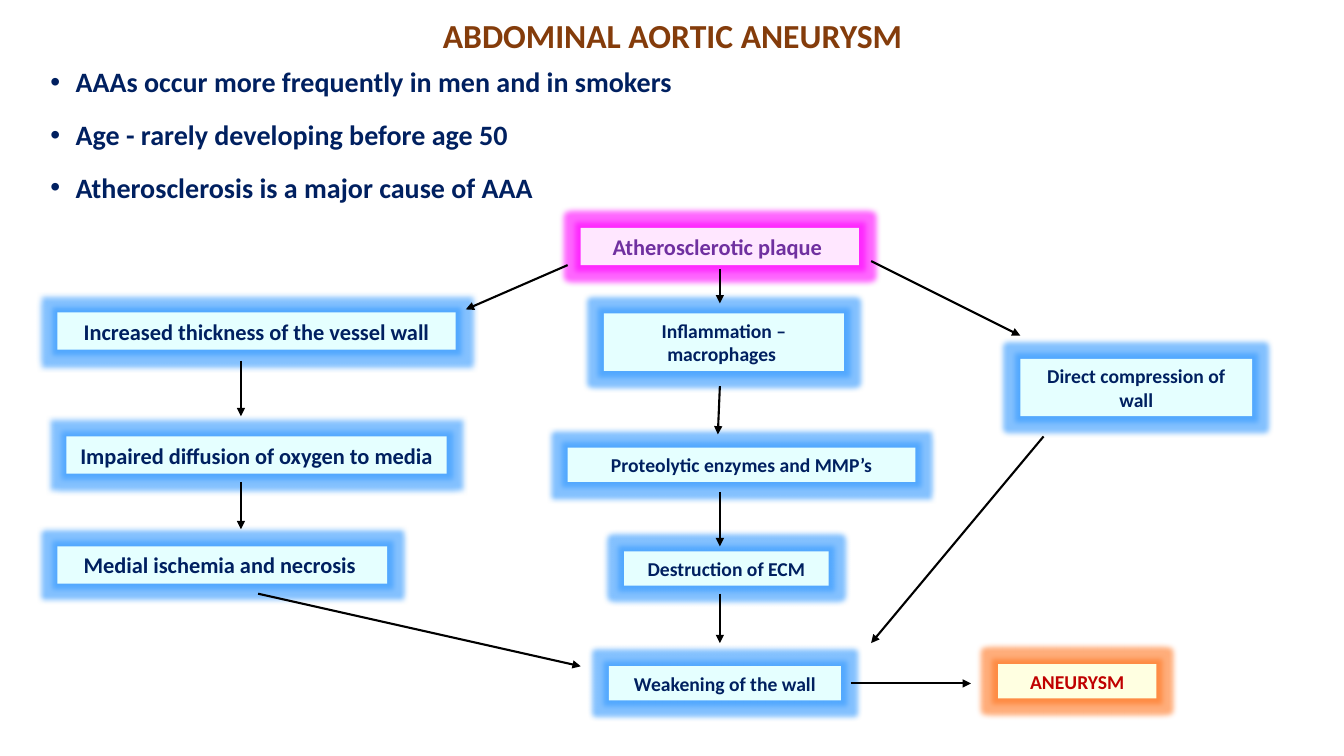
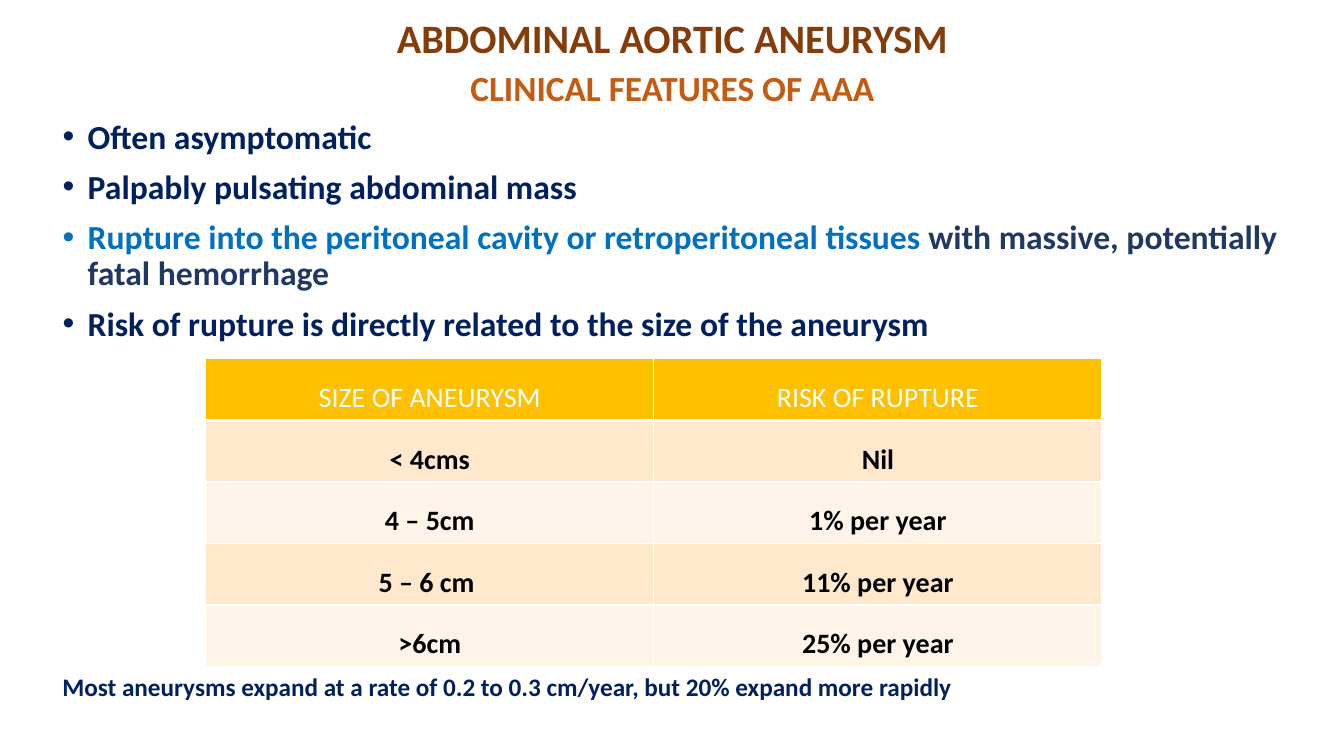
from dataclasses import dataclass

from lxml import etree
from pptx import Presentation, util as u
from pptx.dml.color import RGBColor
from pptx.enum import shapes as sh, text as tx
from pptx.oxml.ns import qn


@dataclass(frozen=True)
class Theme:
    """Colours and type sizes shared by the slides."""
    font: str = "Calibri"
    navy: str = "002060"
    slate: str = "203864"
    blue: str = "0070C0"
    brown: str = "843C0B"
    rust: str = "C55A11"
    black: str = "000000"
    white: str = "FFFFFF"
    gold: str = "FFC000"
    bands: tuple = ("FFE8CC", "FFF4E7")
    cause: tuple = ("FFE7FF", "7030A0", "FF00FF")
    step: tuple = ("E5FFFF", "002060", "3399FF")
    end: tuple = ("FFFFE1", "C00000", "FF7722")
    big: float = 16
    small: float = 14
    note: float = 18
    list: float = 20
    head: float = 24


T = Theme()
HEAD = "ABDOMINAL AORTIC ANEURYSM"


def rgb(code):
    """Turn a hex code into a colour."""
    return RGBColor.from_string(code)


def sub(node, tag, **attrs):
    """Add a drawing element under a node."""
    return etree.SubElement(node, qn("a:" + tag), attrs)


def add_run(para, words, size, color, bold=True):
    """Add one formatted run."""
    run = para.add_run()
    run.text = words
    font = run.font
    font.name, font.size, font.bold = T.font, u.Pt(size), bold
    font.color.rgb = rgb(color)


def place(shape, left, top, width, height):
    """Move and size a shape."""
    shape.left, shape.top = u.Inches(left), u.Inches(top)
    shape.width, shape.height = u.Inches(width), u.Inches(height)


def add_title(slide, box, lines, space, after=0):
    """Fill the title with (words, size, colour) lines."""
    title = slide.shapes.title
    place(title, *box)
    frame = title.text_frame
    frame.auto_size = tx.MSO_AUTO_SIZE.NONE
    frame.vertical_anchor = tx.MSO_ANCHOR.MIDDLE
    para = frame.paragraphs[0]
    para.alignment = tx.PP_ALIGN.CENTER
    para.line_spacing, para.space_after = space, u.Pt(after)
    for i, line in enumerate(lines):
        if i:
            para.add_line_break()
        add_run(para, *line)


def add_list(slide, box, items, size, after=0):
    """Fill the body with bullets, each a list of (words, colour) runs."""
    body = slide.placeholders[1]
    place(body, *box)
    frame = body.text_frame
    frame.auto_size = tx.MSO_AUTO_SIZE.NONE
    for i, item in enumerate(items):
        para = frame.add_paragraph() if i else frame.paragraphs[0]
        props = para._p.get_or_add_pPr()
        props.set("marL", str(u.Inches(0.25)))
        props.set("indent", str(-u.Inches(0.25)))
        sub(props, "buFont", typeface="Arial")
        sub(props, "buChar", char="•")
        para.line_spacing = 0.9
        para.space_before = u.Pt(10 if i else 0)
        para.space_after = u.Pt(after)
        for words, color in item:
            add_run(para, words, size, color)


def add_box(slide, box, words, size, look=T.step):
    """Draw a glowing flow box."""
    fill, ink, glow = look
    shape = slide.shapes.add_shape(
        sh.MSO_SHAPE.RECTANGLE, *map(u.Inches, box))
    shape.fill.solid()
    shape.fill.fore_color.rgb = rgb(fill)
    shape.line.fill.background()
    shape.shadow.inherit = False
    effects = shape.element.spPr.find(qn("a:effectLst"))
    halo = sub(effects, "glow", rad=str(u.Pt(8)))
    tint = sub(halo, "srgbClr", val=glow)
    sub(tint, "alpha", val="60000")
    frame = shape.text_frame
    frame.word_wrap = True
    para = frame.paragraphs[0]
    para.alignment = tx.PP_ALIGN.CENTER
    add_run(para, words, size, ink)


def add_arrow(slide, *ends):
    """Draw an arrow from x, y to x, y."""
    link = slide.shapes.add_connector(
        sh.MSO_CONNECTOR.STRAIGHT, *map(u.Inches, ends))
    link.line.color.rgb = rgb(T.black)
    link.line.width = u.Pt(1.5)
    props = link.element.spPr
    sub(props.find(qn("a:ln")), "tailEnd", type="triangle")
    sub(props, "effectLst")


def add_edges(cell, base):
    """Give a cell white borders."""
    props = cell._tc.get_or_add_tcPr()
    for i, side in enumerate("LRTB"):
        width = base if side == "B" else 1
        edge = sub(props, "ln" + side, w=str(u.Pt(width)))
        sub(sub(edge, "solidFill"), "srgbClr", val=T.white)
        props.insert(i, edge)


def add_grid(slide, box, rows):
    """Draw a table with a header and banded rows."""
    grid = slide.shapes.add_table(
        len(rows), len(rows[0]), *map(u.Inches, box)).table
    for i, row in enumerate(rows):
        for j, words in enumerate(row):
            cell = grid.cell(i, j)
            cell.fill.solid()
            fill = T.bands[(i - 1) % 2] if i else T.gold
            cell.fill.fore_color.rgb = rgb(fill)
            add_edges(cell, 1 if i else 3)
            para = cell.text_frame.paragraphs[0]
            para.alignment = tx.PP_ALIGN.CENTER
            para.line_spacing = 1.5
            add_run(para, words, T.list, T.black if i else T.white, i > 0)


def add_note(slide, box, words):
    """Add a line of plain text."""
    frame = slide.shapes.add_textbox(*map(u.Inches, box)).text_frame
    frame.word_wrap = True
    add_run(frame.paragraphs[0], words, T.note, T.navy)


def add_flow(slide):
    """Draw the chain from plaque to aneurysm."""
    add_box(slide, (5.76, 2.26, 2.76, 0.37), "Atherosclerotic plaque ",
            T.big, T.cause)
    for left, top, width, words in (
            (0.57, 3.1, 3.95, "Increased thickness of the vessel wall"),
            (0.66, 4.33, 3.77, "Impaired diffusion of oxygen to media"),
            (0.57, 5.42, 3.27, "Medial ischemia and necrosis ")):
        add_box(slide, (left, top, width, 0.37), words, T.big)
    for left, top, width, height, words in (
            (5.99, 3.11, 2.38, 0.57, "Inflammation – macrophages "),
            (5.63, 4.44, 3.45, 0.34, "Proteolytic enzymes and MMP’s"),
            (6.19, 5.47, 2.03, 0.34, "Destruction of ECM"),
            (10.12, 3.56, 2.3, 0.57, "Direct compression of wall"),
            (6.04, 6.61, 2.3, 0.34, "Weakening of the wall")):
        add_box(slide, (left, top, width, height), words, T.small)
    add_box(slide, (9.9, 6.59, 1.57, 0.34), "ANEURYSM", T.small, T.end)
    for x, top, end in ((2.39, 3.58, 4.13), (2.39, 4.78, 5.25),
                        (7.14, 2.67, 3.01), (7.14, 4.88, 5.42),
                        (7.14, 5.89, 6.38)):
        add_arrow(slide, x, top, x, end)
    for ends in ((5.63, 2.63, 4.62, 3.07), (8.64, 2.59, 10.12, 3.33),
                 (7.14, 3.83, 7.12, 4.31), (10.35, 4.33, 8.64, 6.38),
                 (8.44, 6.78, 9.63, 6.78), (2.56, 5.89, 5.76, 6.61)):
        add_arrow(slide, *ends)


def add_causes(slide):
    """Build the slide on causes."""
    add_title(slide, (0.92, 0, 11.5, 0.74), [(HEAD, T.head, T.brown)], 0.9)
    facts = ("AAAs occur more frequently in men and in smokers",
             "Age - rarely developing before age 50",
             "Atherosclerosis is a major cause of AAA")
    add_list(slide, (0.4, 0.63, 12.33, 1.64),
             [[(fact, T.navy)] for fact in facts], T.list, 6)
    add_flow(slide)


def add_signs(slide):
    """Build the slide on clinical features."""
    add_title(slide, (0.92, 0.02, 11.5, 1.12),
              [(HEAD, 28.8, T.brown),
               ("CLINICAL FEATURES OF AAA", 25.2, T.rust)], 1.1, 12)
    add_list(slide, (0.52, 1.14, 12.29, 2.63), [
        [("Often asymptomatic", T.navy)],
        [("Palpably pulsating abdominal mass", T.navy)],
        [("Rupture into the peritoneal cavity or retroperitoneal tissues",
          T.blue),
         (" with massive, potentially fatal hemorrhage", T.slate)],
        [("Risk of rupture is directly related to the size of the aneurysm",
          T.navy)]], T.head)
    add_grid(slide, (2.04, 3.56, 8.89, 3.05), (
        ("SIZE OF ANEURYSM", "RISK OF RUPTURE"),
        ("< 4cms", "Nil"),
        ("4 – 5cm", "1% per year"),
        ("5 – 6 cm ", "11% per year"),
        (">6cm", "25% per year")))
    add_note(slide, (0.52, 6.61, 12.6, 0.4),
             "Most aneurysms expand at a rate of 0.2 to 0.3 cm/year, "
             "but 20% expand more rapidly")


def main():
    """Build and save the deck."""
    deck = Presentation()
    deck.slide_width, deck.slide_height = u.Inches(13.33), u.Inches(7.5)
    for build in (add_causes, add_signs):
        build(deck.slides.add_slide(deck.slide_layouts[1]))
    deck.save("out.pptx")


if __name__ == "__main__":
    main()
